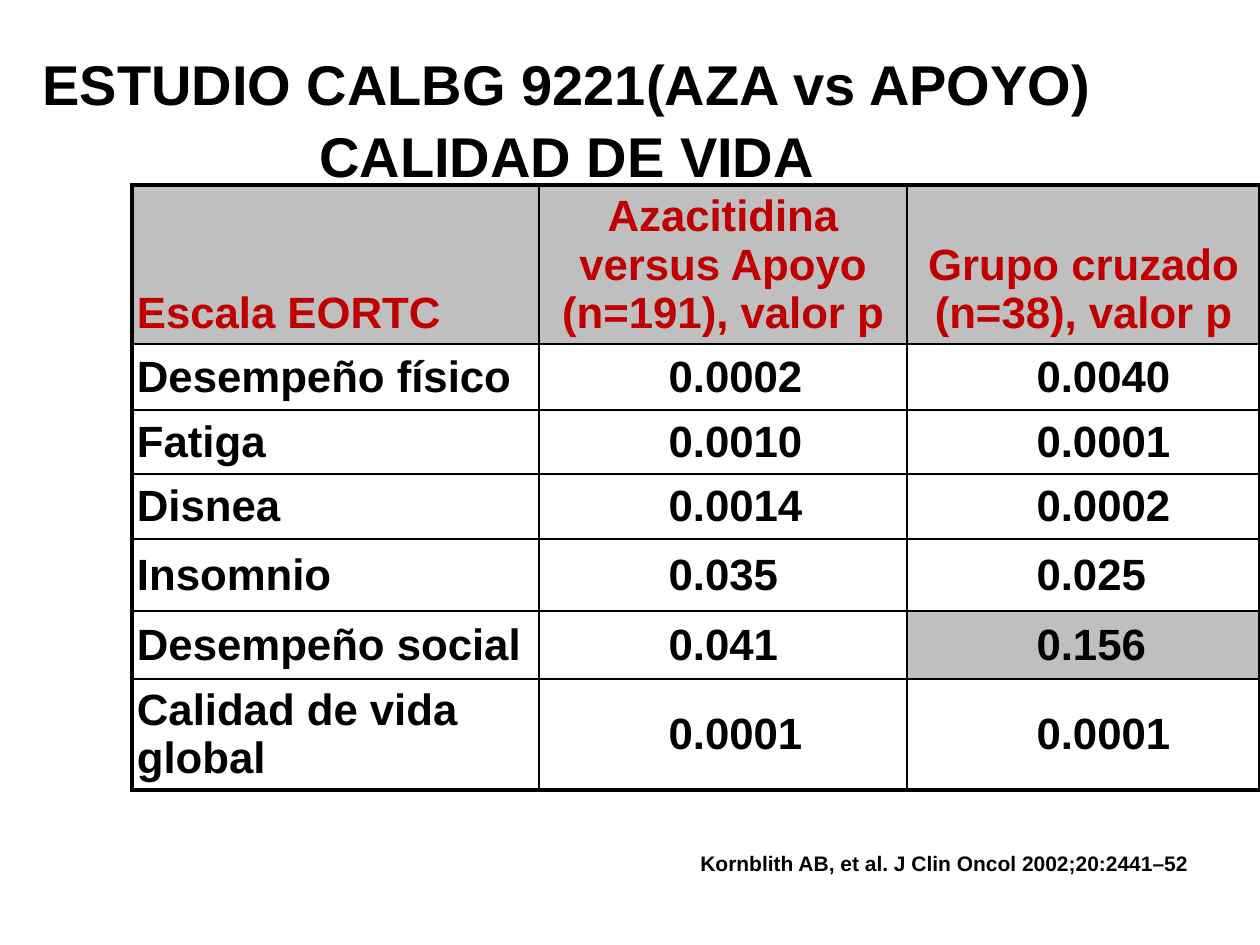
"""Build the quality-of-life results slide with its EORTC scale table."""
from lxml.etree import SubElement
from pptx import Presentation
from pptx.dml.color import RGBColor
from pptx.enum.text import MSO_ANCHOR, MSO_AUTO_SIZE, PP_ALIGN
from pptx.oxml import parse_xml
from pptx.oxml.ns import nsdecls, qn
from pptx.util import Pt

SCALE = 914400 / 126
BLACK, RED, GREY = "000000", "C00000", "BFBFBF"


def px(length):
    return round(length * SCALE)


def write(para, text, size, color, align):
    para.alignment = align
    for index, line in enumerate(text.split("\n")):
        if index:
            para.add_line_break()
        span = para.add_run()
        span.text = line
        span.font.name = "Arial"
        span.font.size = Pt(size)
        span.font.bold = True
        span.font.color.rgb = RGBColor.from_string(color)


deck = Presentation()
deck.slide_width, deck.slide_height = px(1260), px(945)
page = deck.slides.add_slide(deck.slide_layouts[5])

title = page.shapes.title
title.left, title.top, title.width, title.height = px(0), px(38), px(1134), px(157)
title.text_frame.auto_size = MSO_AUTO_SIZE.NONE
title.text_frame.vertical_anchor = MSO_ANCHOR.MIDDLE
title_para = title.text_frame.paragraphs[0]
title_para.line_spacing = 1.07
write(title_para, "ESTUDIO CALBG 9221(AZA vs APOYO)\nCALIDAD DE VIDA", 32, BLACK, PP_ALIGN.CENTER)

rows = [
    ("Escala EORTC", "Azacitidina versus Apoyo\n(n=191), valor p", "Grupo cruzado\n(n=38), valor p"),
    ("Desempeño físico", "0.0002", "0.0040"),
    ("Fatiga", "0.0010", "0.0001"),
    ("Disnea", "0.0014", "0.0002"),
    ("Insomnio", "0.035", "0.025"),
    ("Desempeño social", "0.041", "0.156"),
    ("Calidad de vida global", "0.0001", "0.0001"),
]
widths = [407, 368, 353]
heights = [159, 66, 64, 65, 72, 68, 111]
last_row, last_column = len(rows) - 1, len(widths) - 1

frame = page.shapes.add_table(
    len(rows), len(widths), px(132), px(185), px(sum(widths)), px(sum(heights))
)
table = frame.table
table.first_row = table.horz_banding = False
for column, width in zip(table.columns, widths):
    column.width = px(width)
for row, height in zip(table.rows, heights):
    row.height = px(height)

for r, texts in enumerate(rows):
    for c, text in enumerate(texts):
        cell = table.cell(r, c)
        header, value = r == 0, r > 0 and c > 0
        cell.margin_left = cell.margin_right = px(5)
        cell.margin_top = cell.margin_bottom = px(6)
        cell.vertical_anchor = MSO_ANCHOR.BOTTOM if header else MSO_ANCHOR.MIDDLE
        if header or text == "0.156":
            cell.fill.solid()
            cell.fill.fore_color.rgb = RGBColor.from_string(GREY)
        else:
            cell.fill.background()

        para = cell.text_frame.paragraphs[0]
        write(
            para,
            "\t" + text if value else text,
            25,
            RED if header else BLACK,
            PP_ALIGN.CENTER if header and c else PP_ALIGN.LEFT,
        )
        if value:
            tabs = SubElement(para._p.get_or_add_pPr(), qn("a:tabLst"))
            SubElement(tabs, qn("a:tab"), pos=str(px(149)), algn="dec")

        borders = {
            "lnL": 2.25 if c == 0 else 1,
            "lnR": 2.25 if c == last_column else 1,
            "lnT": 2.25 if header else 1.5 if r == 1 else 1,
            "lnB": 1.5 if header else 2.25 if r == last_row else 1,
        }
        properties = cell._tc.get_or_add_tcPr()
        for position, (side, weight) in enumerate(borders.items()):
            properties.insert(position, parse_xml(
                f'<a:{side} {nsdecls("a")} w="{Pt(weight)}"><a:solidFill>'
                f'<a:srgbClr val="{BLACK}"/></a:solidFill></a:{side}>'
            ))

box = page.shapes.add_textbox(px(687), px(844), px(514), px(38))
box.text_frame.word_wrap = False
box.text_frame.auto_size = MSO_AUTO_SIZE.SHAPE_TO_FIT_TEXT
write(
    box.text_frame.paragraphs[0],
    "Kornblith AB, et al. J Clin Oncol 2002;20:2441–52",
    12, BLACK, PP_ALIGN.RIGHT,
)

deck.save("out.pptx")
